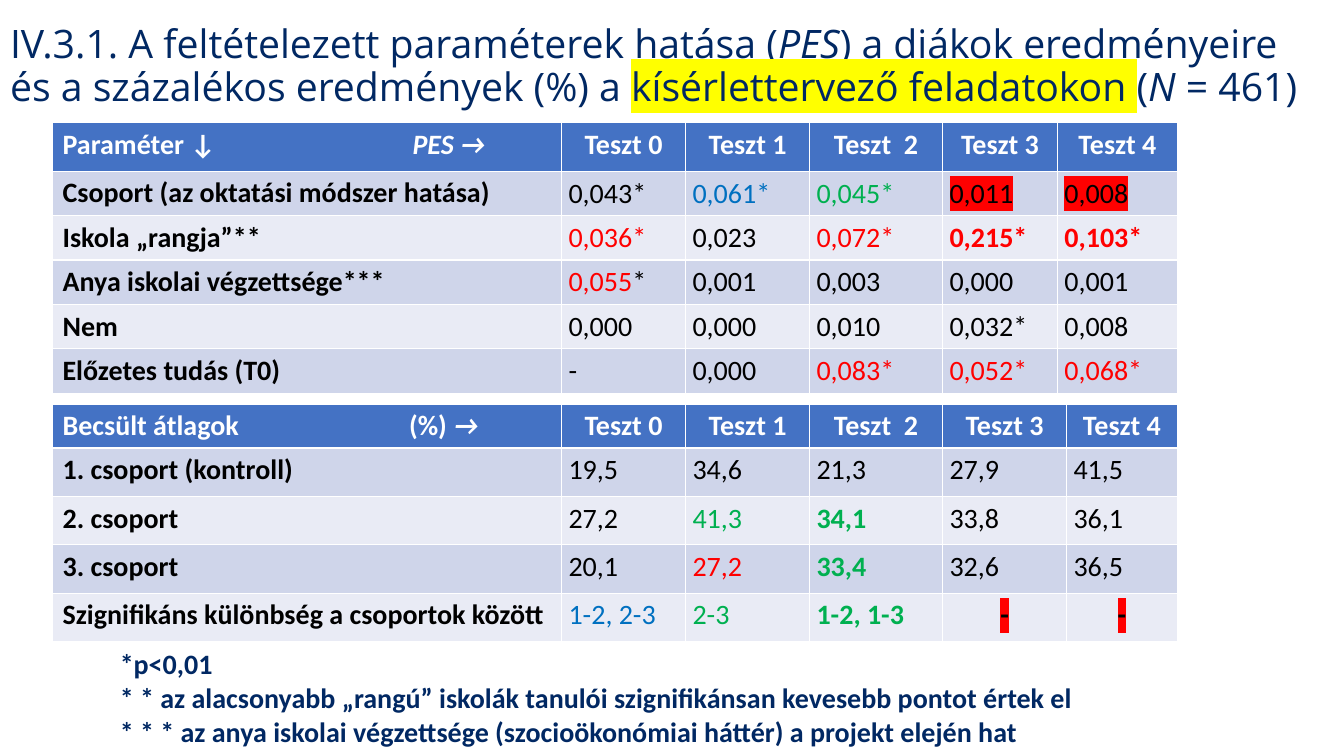
"""Builds a slide with two tables on the effect of parameters on student results."""
from lxml.etree import SubElement
from pptx import Presentation
from pptx.dml.color import RGBColor
from pptx.enum.text import MSO_ANCHOR, MSO_AUTO_SIZE, PP_ALIGN
from pptx.oxml.ns import qn
from pptx.util import Pt

NAVY = RGBColor(0x01, 0x28, 0x63)
WHITE = RGBColor(0xFF, 0xFF, 0xFF)
BLACK = RGBColor(0, 0, 0)
RED = RGBColor(0xFF, 0, 0)
GREEN = RGBColor(0, 0xB0, 0x50)
BLUE = RGBColor(0, 0x70, 0xC0)
YELLOW = RGBColor(0xFF, 0xFF, 0)
HEADER = RGBColor(0x44, 0x72, 0xC4)
BANDS = (RGBColor(0xCF, 0xD5, 0xEA), RGBColor(0xE9, 0xEB, 0xF5))

ITALIC = {"italic": True}
IN_RED = {"color": RED}
IN_GREEN = {"color": GREEN}
IN_BLUE = {"color": BLUE}
BOLD_RED = {"color": RED, "bold": True}
BOLD_GREEN = {"color": GREEN, "bold": True}
MARKED = {"highlight": RED}
DASH = {"highlight": RED, "bold": True, "align": PP_ALIGN.CENTER}

TESTS = ["Teszt 0", "Teszt 1", "Teszt  2", "Teszt 3", "Teszt 4"]
EFFECTS = [
    [[("Paraméter ↓\t", {}), ("PES →", ITALIC)], *TESTS],
    ["Csoport (az oktatási módszer hatása)", "0,043*", ("0,061*", IN_BLUE),
     ("0,045*", IN_GREEN), ("0,011", MARKED), ("0,008", MARKED)],
    ["Iskola „rangja”**", ("0,036*", IN_RED), "0,023", ("0,072*", IN_RED),
     ("0,215*", BOLD_RED), ("0,103*", BOLD_RED)],
    ["Anya iskolai végzettsége***", [("0,055", IN_RED), ("*", {})],
     "0,001", "0,003", "0,000", "0,001"],
    ["Nem", "0,000", "0,000", "0,010", "0,032*", "0,008"],
    ["Előzetes tudás (T0)", "-", "0,000", ("0,083*", IN_RED),
     ("0,052*", IN_RED), ("0,068*", IN_RED)],
]
MEANS = [
    [[("Becsült átlagok\t(%) ", {}), ("→", ITALIC)], *TESTS],
    ["1. csoport (kontroll)", "19,5", "34,6", "21,3", "27,9", "41,5"],
    ["2. csoport", "27,2", ("41,3", IN_GREEN), ("34,1", BOLD_GREEN), "33,8", "36,1"],
    ["3. csoport", "20,1", ("27,2", IN_RED), ("33,4", BOLD_GREEN), "32,6", "36,5"],
    ["Szignifikáns különbség a csoportok között", ("1-2, 2-3", IN_BLUE),
     ("2-3", IN_GREEN), ("1-2, 1-3", BOLD_GREEN), ("-", DASH), ("-", DASH)],
]
NOTES = [
    "*p<0,01",
    "* * az alacsonyabb „rangú” iskolák tanulói szignifikánsan kevesebb pontot értek el",
    "* * * az anya iskolai végzettsége (szocioökonómiai háttér) a projekt elején hat",
]


def set_attrs(obj, values):
    """Set each attribute named in values."""
    for name, value in values.items():
        setattr(obj, name, value)


def add_run(p, text, color, highlight=None, **font):
    """Add a formatted run to a paragraph."""
    r = p.add_run()
    r.text = text
    set_attrs(r.font, {"size": Pt(20), "name": "Calibri", "bold": False, **font})
    r.font.color.rgb = color
    if highlight is not None:
        rpr = r.font._element
        mark = SubElement(rpr, qn("a:highlight"))
        SubElement(mark, qn("a:srgbClr"), val=str(highlight))
        rpr.find(qn("a:solidFill")).addnext(mark)


def add_tab_stop(p, pos):
    """Give a paragraph one left tab stop."""
    tabs = SubElement(p._p.get_or_add_pPr(), qn("a:tabLst"))
    SubElement(tabs, qn("a:tab"), pos=str(int(pos)), algn="l")


def fill_cell(cell, content, row, col, tab):
    """Fill one cell according to its row and column."""
    cell.fill.solid()
    cell.fill.fore_color.rgb = BANDS[(row - 1) % 2] if row else HEADER
    p = cell.text_frame.paragraphs[0]
    if row and col:
        set_attrs(cell, {"margin_left": Pt(5), "margin_right": Pt(5),
                         "margin_top": 0, "margin_bottom": 0})
        set_attrs(p, {"line_spacing": 1.15, "space_after": Pt(10)})
    elif col:
        p.alignment = PP_ALIGN.CENTER
    elif not row:
        add_tab_stop(p, tab)
    if isinstance(content, str):
        content = (content, {})
    runs = content if isinstance(content, list) else [content]
    for text, style in runs:
        style = {"color": BLACK if row else WHITE, "bold": not (row and col), **style}
        p.alignment = style.pop("align", p.alignment)
        add_run(p, text, **style)


def add_data_table(slide, top, widths, heights, rows, tab):
    """Add a banded table with a header row."""
    frame = slide.shapes.add_table(len(rows), len(widths), Pt(37.5), Pt(top),
                                   Pt(sum(widths)), Pt(sum(heights)))
    table = frame.table
    for column, width in zip(table.columns, widths):
        column.width = Pt(width)
    for i, (height, row) in enumerate(zip(heights, rows)):
        table.rows[i].height = Pt(height)
        for j, content in enumerate(row):
            fill_cell(table.cell(i, j), content, i, j, tab)


def set_title(slide):
    """Place and write the title."""
    sp = slide.shapes.title
    set_attrs(sp, {"left": 0, "top": Pt(1.5), "width": Pt(952), "height": Pt(93)})
    tf = sp.text_frame
    set_attrs(tf, {"word_wrap": True, "auto_size": MSO_AUTO_SIZE.NONE,
                   "vertical_anchor": MSO_ANCHOR.MIDDLE})
    p = tf.paragraphs[0]
    set_attrs(p, {"alignment": PP_ALIGN.LEFT, "line_spacing": 0.9, "space_before": 0})
    base = {"color": NAVY, "size": Pt(28), "name": "Open Sans"}
    add_run(p, "IV.3.1. A feltételezett paraméterek hatása (", **base)
    add_run(p, "PES", **base, **ITALIC)
    add_run(p, ") a diákok eredményeire ", **base)
    p.add_line_break()
    add_run(p, "és a százalékos eredmények (%) a ", **base)
    add_run(p, "kísérlettervező feladatokon ", **base, highlight=YELLOW)
    add_run(p, "(", **base)
    add_run(p, "N", **base, **ITALIC)
    add_run(p, " = 461)", **base)


def add_notes_box(slide):
    """Add the footnotes under the tables."""
    tf = slide.shapes.add_textbox(Pt(78.5), Pt(458.6), Pt(720), Pt(80)).text_frame
    set_attrs(tf, {"word_wrap": True, "auto_size": MSO_AUTO_SIZE.SHAPE_TO_FIT_TEXT})
    for i, text in enumerate(NOTES):
        p = tf.add_paragraph() if i else tf.paragraphs[0]
        add_run(p, text, NAVY, bold=True)


def main():
    """Build and save the slide."""
    prs = Presentation()
    set_attrs(prs, {"slide_width": Pt(960), "slide_height": Pt(540)})
    slide = prs.slides.add_slide(prs.slide_layouts[5])
    set_title(slide)
    add_data_table(slide, 87.8, [363.6, 88.6, 88.6, 95, 82.1, 85.7],
                   [34.5] + [31.2] * 5, EFFECTS, Pt(250))
    add_notes_box(slide)
    add_data_table(slide, 288.7, [363.6, 88.6, 88.6, 95, 88.6, 79.2],
                   [23] + [34.6] * 4, MEANS, Pt(247.5))
    prs.save("out.pptx")


if __name__ == "__main__":
    main()
